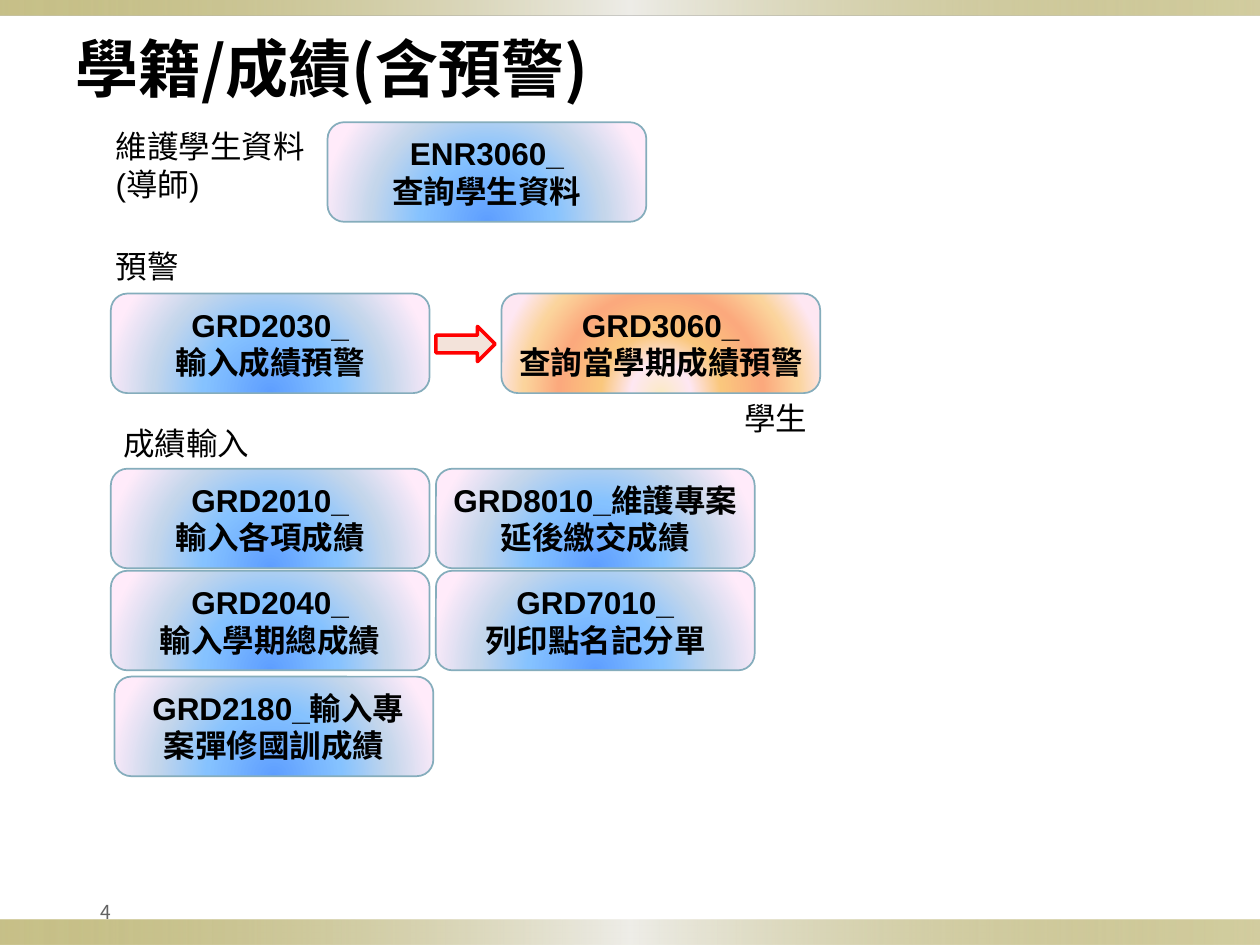
import pptx
import pptx.util
from lxml import etree
from pptx.dml.color import RGBColor
from pptx.enum.shapes import MSO_SHAPE
from pptx.enum.text import MSO_ANCHOR, PP_ALIGN
from pptx.oxml.ns import qn
from pptx.util import Inches, Pt

BLACK = RGBColor(0x00, 0x00, 0x00)
GREY = RGBColor(0x63, 0x63, 0x63)
RED = RGBColor(0xFF, 0x00, 0x00)
PEACH = RGBColor(0xF3, 0xE3, 0xDA)
EDGE = RGBColor(0x85, 0xAD, 0xBC)
LATIN, CJK = "Arial", "Noto Sans CJK SC"

# Gradient stops: position, colour, opacity (percent)
GOLD = [(0, "918415", 50), (50, "EEEDE8", 100), (100, "918415", 40)]
BLUE = [(0, "5E9EFF", 100), (40, "85C2FF", 100), (70, "C4D6EB", 100), (100, "FFEBFA", 100)]
ORANGE = [(0, "FBEAC7", 100), (18, "FEE7F2", 100), (36, "FAC77D", 100),
          (61, "FBA97D", 100), (82, "FBD49C", 100), (100, "FEE7F2", 100)]

# Content: a line break inside a paragraph is \v
TITLE = "學籍/成績(含預警)"
PAGE_NUMBER = "4"
LEFT, WIDE, HIGH, GAP = 0.88, 2.53, 0.79, 0.05
SECOND = LEFT + WIDE + GAP
ROW_TOP, ROW_STEP = 3.72, 0.81
BARS = [(7.3, 0.2), (0, 0.12)]
LABELS = [
    ("維護學生資料\n(導師)", 0.82, 0.96, 1.72, 0.71),
    ("預警", 0.82, 1.91, 0.71, 0.4),
    ("學生", 5.81, 3.12, 0.71, 0.4),
    ("成績輸入", 0.88, 3.32, 1.21, 0.4),
]
FUNCTIONS = [
    ("ENR3060_\n查詢學生資料", 2.6, 0.97, BLUE),
    ("GRD2030_\v輸入成績預警", LEFT, 2.33, BLUE),
    ("GRD3060_\n查詢當學期成績預警", 3.98, 2.33, ORANGE),
    ("GRD2010_\n輸入各項成績", LEFT, ROW_TOP, BLUE),
    ("GRD8010_維護專案延後繳交成績", SECOND, ROW_TOP, BLUE),
    ("GRD2040_\n輸入學期總成績", LEFT, ROW_TOP + ROW_STEP, BLUE),
    ("GRD7010_\n列印點名記分單", SECOND, ROW_TOP + ROW_STEP, BLUE),
    (" GRD2180_輸入專案彈修國訓成績", 0.91, 5.37, BLUE),
]


def write(box, text, font, align=PP_ALIGN.LEFT, color=BLACK, **frame_format):
    frame = box.text_frame
    frame.text = text
    for name, value in frame_format.items():
        setattr(frame, name, value)
    for para in frame.paragraphs:
        para.alignment = align
        for span in para.runs:
            for name, value in font.items():
                setattr(span.font, name, value)
            span.font.color.rgb = color
            east = etree.SubElement(span.font._element, qn("a:ea"))
            east.set("typeface", CJK)


def add_shape(page, kind, left, top, width, height):
    shape = page.shapes.add_shape(kind, *map(Inches, (left, top, width, height)))
    shape.shadow.inherit = False
    return shape


def fill_gradient(shape, stops, radial):
    shape.fill.gradient()
    gradient = shape._element.spPr.find(qn("a:gradFill"))
    for child in list(gradient):
        gradient.remove(child)
    stop_list = etree.SubElement(gradient, qn("a:gsLst"))
    for position, color, opacity in stops:
        stop = etree.SubElement(stop_list, qn("a:gs"), pos=str(position * 1000))
        tone = etree.SubElement(stop, qn("a:srgbClr"), val=color)
        if opacity < 100:
            etree.SubElement(tone, qn("a:alpha"), val=str(opacity * 1000))
    if radial:  # spreads from the middle of the bottom edge
        circle = etree.SubElement(gradient, qn("a:path"), path="circle")
        etree.SubElement(circle, qn("a:fillToRect"), l="50000", t="100000", r="50000", b="0")
    else:
        etree.SubElement(gradient, qn("a:lin"), ang="0", scaled="0")


def set_line(shape, color, width):
    shape.line.color.rgb = color
    shape.line.width = Pt(width)


def main():
    deck = pptx.Presentation()
    deck.slide_width, deck.slide_height = Inches(10), Inches(7.5)
    page = deck.slides.add_slide(deck.slide_layouts[5])

    # Gold bars at the page edges
    for top, height in BARS:
        bar = add_shape(page, MSO_SHAPE.RECTANGLE, 0, top, 10, height)
        fill_gradient(bar, GOLD, radial=False)
        bar.line.fill.background()

    # Title and page number
    title = page.shapes.title
    title.left, title.top, title.width, title.height = map(Inches, (0.5, 0.05, 9, 0.97))
    write(title, TITLE, {"name": CJK, "size": Pt(36), "bold": True},
          vertical_anchor=MSO_ANCHOR.MIDDLE)
    number = page.shapes.add_textbox(*map(Inches, (0, 7.04, 0.93, 0.4)))
    inset = Inches(0.05)
    write(number, PAGE_NUMBER, {"name": CJK, "size": Pt(11)}, PP_ALIGN.RIGHT, GREY,
          vertical_anchor=MSO_ANCHOR.MIDDLE, word_wrap=True, margin_left=inset,
          margin_right=inset, margin_top=inset, margin_bottom=inset)

    # Function boxes
    for text, left, top, stops in FUNCTIONS:
        box = add_shape(page, MSO_SHAPE.ROUNDED_RECTANGLE, left, top, WIDE, HIGH)
        fill_gradient(box, stops, radial=True)
        set_line(box, EDGE, 1)
        write(box, text, {"name": LATIN, "size": Pt(18), "bold": True}, PP_ALIGN.CENTER,
              vertical_anchor=MSO_ANCHOR.MIDDLE, word_wrap=True)

    # Arrow from entering to querying warnings
    arrow = add_shape(page, MSO_SHAPE.RIGHT_ARROW, SECOND, 2.59, 0.47, 0.28)
    arrow.fill.solid()
    arrow.fill.fore_color.rgb = PEACH
    set_line(arrow, RED, 2)

    # Section labels
    for text, *place in LABELS:
        label = page.shapes.add_textbox(*map(Inches, place))
        write(label, text, {"name": LATIN, "size": Pt(18)}, word_wrap=False)

    deck.save("out.pptx")


if __name__ == "__main__":
    main()
